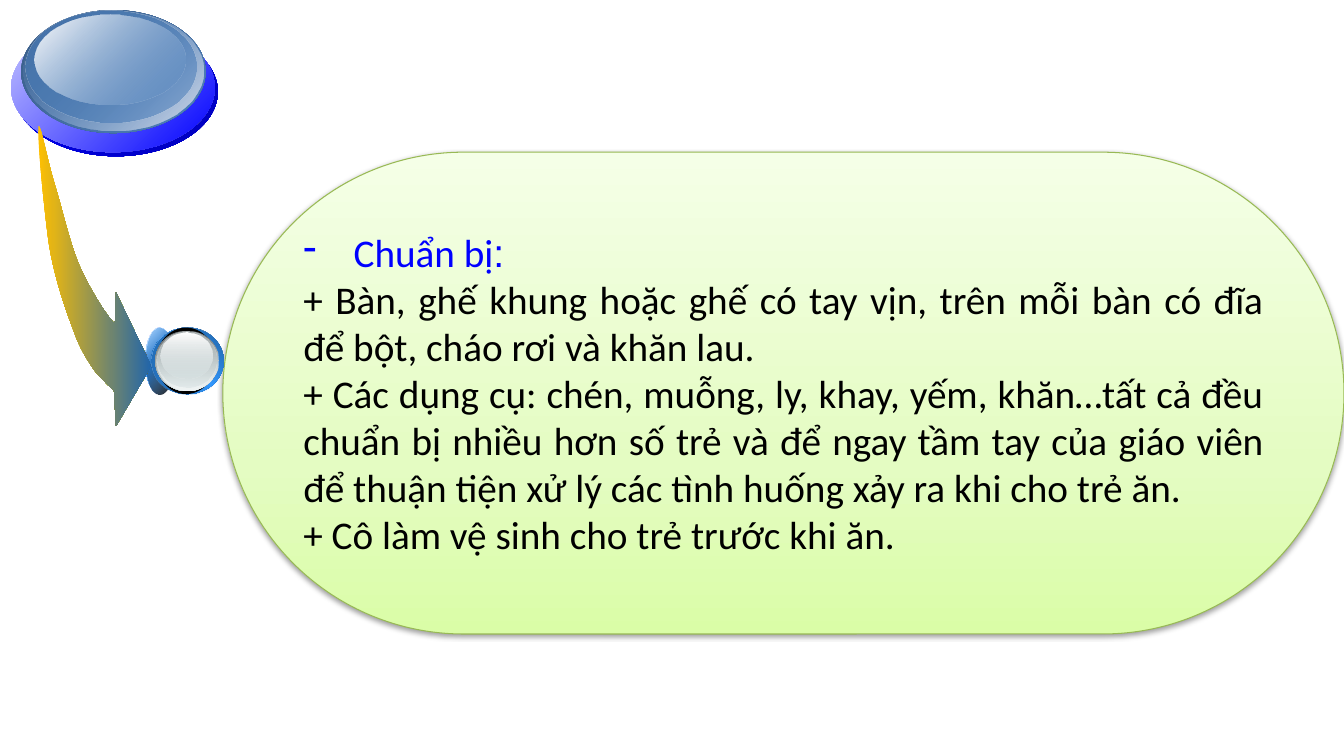
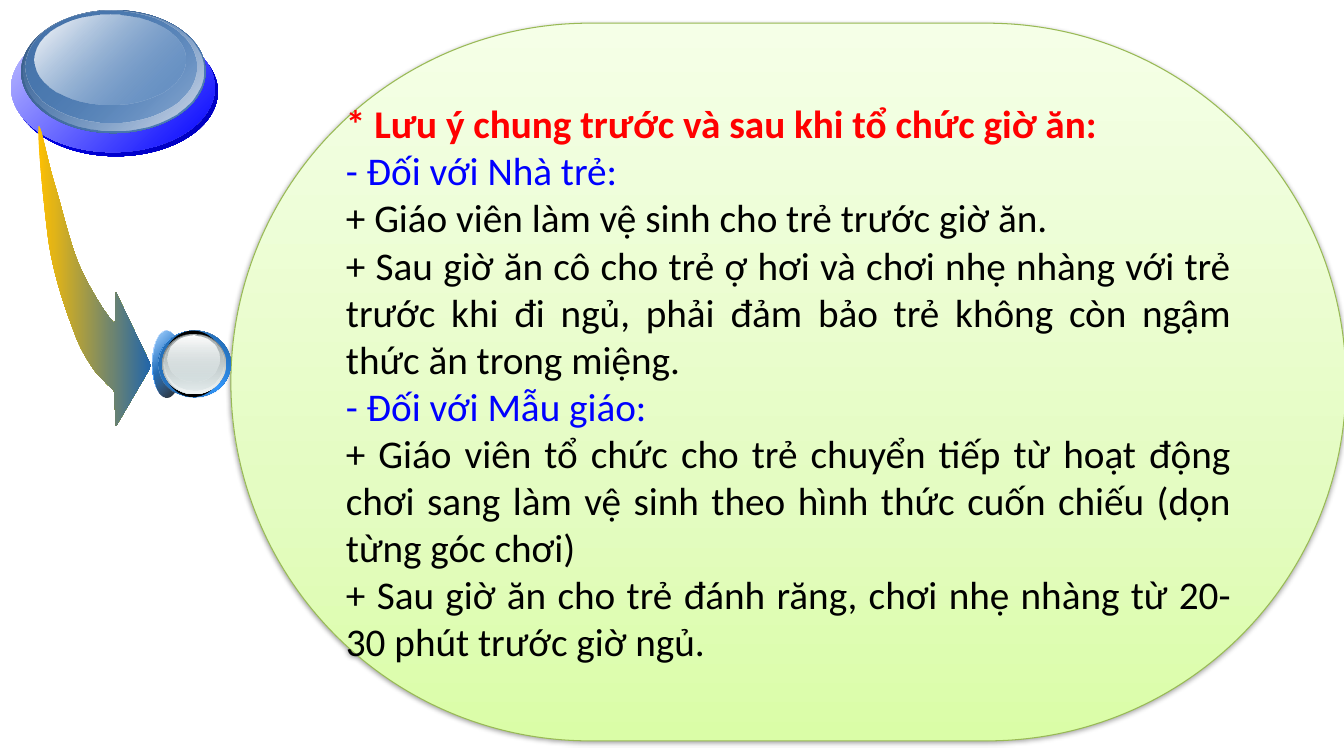
import pptx
import pptx.util
import pptx.dml.color
import pptx.enum.shapes
import pptx.enum.text
import pptx.oxml
import pptx.oxml.ns
import lxml.etree

Inches = pptx.util.Inches
Pt = pptx.util.Pt
qn = pptx.oxml.ns.qn
KIND = pptx.enum.shapes.MSO_SHAPE
BLUE, RED, BLACK = "0000FF", "FF0000", "000000"
STEEL, SKY, MIST, WHITE = "4F81BD", "3399FF", "D6E1E2", "FFFFFF"


def paint(fill, hues, turn=0):
    if isinstance(hues, str):
        fill.solid()
        fill.fore_color.rgb = pptx.dml.color.RGBColor.from_string(hues)
        return
    fill.gradient()
    fill.gradient_angle = -turn % 360
    stops = fill._xPr.find(qn("a:gradFill")).find(qn("a:gsLst"))
    for old in list(stops):
        stops.remove(old)
    for place, hue, *alpha in hues:
        stop = lxml.etree.SubElement(stops, qn("a:gs"), pos=str(place * 1000))
        tint = lxml.etree.SubElement(stop, qn("a:srgbClr"), val=hue)
        for part in alpha:
            lxml.etree.SubElement(tint, qn("a:alpha"), val=str(part * 1000))


def say(para, text, hue=BLACK, bold=False, face="Calibri", size=28):
    para.alignment = pptx.enum.text.PP_ALIGN.JUSTIFY
    run = para.add_run()
    run.text = text
    run.font.name = face
    run.font.size = Pt(size)
    run.font.bold = bold
    paint(run.font.fill, hue)


DISC = [
    (0.14, 0.27, 2.02, 1.28, [(0, BLUE), (100, "0000BA")], 45),
    (0.11, 0.23, 2.02, 1.28, [(0, "C6C6FF"), (100, BLUE)], 45),
    (0.21, 0.1, 1.83, 1.22, [(0, "395C87"), (100, STEEL)], 45),
    (0.23, 0.1, 1.79, 1.19, [(0, STEEL, 0), (100, "D7DEEB")], 45),
    (0.25, 0.11, 1.7, 1.11, [(0, "4775AB"), (100, STEEL, 48)], 45),
    (0.34, 0.14, 1.5, 0.9, [(0, WHITE), (100, STEEL, 38)], 45),
]
KNOB = [
    (1.44, 3.25, 0.28, 0.66, [(0, WHITE), (50, SKY), (100, WHITE)], 45),
    (1.44, 3.25, 0.28, 0.66, [(0, SKY, 32), (100, BLACK, 90)], 45),
    (1.5, 3.25, 0.72, 0.66, [(0, "1C538A"), (50, SKY), (100, "1C538A")], 315),
    (1.5, 3.25, 0.72, 0.66, [(0, "2061A2"), (100, SKY, 0)], 45),
    (1.55, 3.25, 0.59, 0.66, BLACK, 0),
    (1.54, 3.28, 0.63, 0.6, [(0, "636869"), (100, MIST)], 90),
    (1.55, 3.28, 0.62, 0.59, [(0, MIST, 0), (100, "F1F5F5")], 90),
    (1.56, 3.29, 0.59, 0.55, [(0, "AAB2B3"), (100, MIST, 48)], 90),
    (1.59, 3.3, 0.52, 0.45, [(0, WHITE), (100, MIST, 38)], 90),
]
PANEL = [(0, "DAFDA7"), (35, "E4FCC2"), (100, "F5FFE7")]
SHADE = (
    '<a:outerShdw xmlns:a="http://schemas.openxmlformats.org/drawingml/2006/main"'
    ' blurRad="40000" dist="20000" dir="5400000" rotWithShape="0">'
    '<a:srgbClr val="000000"><a:alpha val="38000"/></a:srgbClr></a:outerShdw>'
)
ARROW = [
    (0.37, 1.38, 0.44, 2.12, 0.49, 2.45),
    (0.55, 2.79, 0.65, 3.07, 0.73, 3.28),
    (0.8, 3.48, 0.88, 3.59, 0.94, 3.68),
    (1.07, 3.82), (1.13, 3.87), (1.15, 4.23),
    (1.5, 3.63), (1.15, 2.9), (1.14, 3.21),
    (1.08, 3.17, 0.89, 2.87, 0.79, 2.64),
    (0.69, 2.41, 0.61, 2.04, 0.54, 1.82),
    (0.47, 1.59, 0.38, 1.12, 0.38, 1.28),
]
STEPS = 12

PAGES = [
    ((2.21, 1.51, 11.12, 4.78), (0, 0), [
        ("Chuẩn bị", BLUE, False),
        ("+ Bàn, ghế khung hoặc ghế có tay vịn, trên mỗi bàn có đĩa để bột, "
         "cháo rơi và khăn lau.", BLACK, False),
        ("+ Các dụng cụ: chén, muỗng, ly, khay, yếm, khăn…tất cả đều chuẩn bị "
         "nhiều hơn số trẻ và để ngay tầm tay của giáo viên để thuận tiện xử lý "
         "các tình huống xảy ra khi cho trẻ ăn.", BLACK, False),
        ("+ Cô làm vệ sinh cho trẻ trước khi ăn.", BLACK, False),
    ]),
    ((2.29, 0.23, 11.06, 7.12), (0.07, 0.03), [
        ("* Lưu ý chung trước và sau khi tổ chức giờ ăn:", RED, True),
        ("- Đối với Nhà trẻ:", BLUE, False),
        ("+ Giáo viên làm vệ sinh cho trẻ trước giờ ăn.", BLACK, False),
        ("+ Sau giờ ăn cô cho trẻ ợ hơi và chơi nhẹ nhàng với trẻ trước khi đi "
         "ngủ, phải đảm bảo trẻ không còn ngậm thức ăn trong miệng.", BLACK, False),
        ("- Đối với Mẫu giáo:", BLUE, False),
        ("+ Giáo viên tổ chức cho trẻ chuyển tiếp từ hoạt động chơi sang làm vệ "
         "sinh theo hình thức cuốn chiếu (dọn từng góc chơi)", BLACK, False),
        ("+ Sau giờ ăn cho trẻ đánh răng, chơi nhẹ nhàng từ 20-30 phút trước "
         "giờ ngủ.", BLACK, False),
    ]),
]

deck = pptx.Presentation()
deck.slide_width = Inches(13.33)
deck.slide_height = Inches(7.5)

for box, (right, down), lines in PAGES:
    slide = deck.slides.add_slide(deck.slide_layouts[6])
    shapes = slide.shapes
    moved = [(x + right, y + down, *rest) for x, y, *rest in KNOB]
    ovals = [(KIND.OVAL, *part) for part in moved]
    parts = [(KIND.OVAL, *part) for part in DISC]
    parts += [(KIND.ROUNDED_RECTANGLE, *box, PANEL, 270)] + ovals
    for kind, x, y, wide, high, hues, turn in parts:
        shape = shapes.add_shape(kind, Inches(x), Inches(y), Inches(wide), Inches(high))
        shape.shadow.inherit = False
        paint(shape.fill, hues, turn)
        if kind == KIND.OVAL:
            shape.line.fill.background()
        else:
            panel = shape

    panel.adjustments[0] = 0.5
    paint(panel.line.fill, "98B955")
    panel.line.width = Pt(0.75)
    glow = panel.element.spPr.find(qn("a:effectLst"))
    glow.append(pptx.oxml.parse_xml(SHADE))
    frame = panel.text_frame
    frame.word_wrap = True
    frame.vertical_anchor = pptx.enum.text.MSO_ANCHOR.MIDDLE
    for count, (text, hue, bold) in enumerate(lines):
        para = frame.add_paragraph() if count else frame.paragraphs[0]
        say(para, text, hue=hue, bold=bold)
        if text == "Chuẩn bị":
            say(para, ":", hue=hue, face="Arial")
            props = para._p.get_or_add_pPr()
            props.set("marL", str(Inches(0.5)))
            props.set("indent", str(-Inches(0.5)))
            lxml.etree.SubElement(props, qn("a:buChar"), char="-")

    last = (0.38, 1.28)
    pen = shapes.build_freeform(Inches(last[0]), Inches(last[1]))
    dots = []
    for piece in ARROW:
        if len(piece) == 2:
            dots.append(piece)
        else:
            xs, ys = (last[0], *piece[::2]), (last[1], *piece[1::2])
            for step in range(1, STEPS + 1):
                t = step / STEPS
                mix = ((1 - t) ** 3, 3 * t * (1 - t) ** 2, 3 * t * t * (1 - t), t ** 3)
                dots.append([sum(m * v for m, v in zip(mix, side)) for side in (xs, ys)])
        last = piece[-2:]
    pen.add_line_segments([(Inches(x), Inches(y)) for x, y in dots], close=True)
    arrow = pen.convert_to_shape()
    arrow.shadow.inherit = False
    arrow.line.fill.background()
    paint(arrow.fill, [(0, "FFC000"), (100, "2165AA")])

deck.save("out.pptx")
